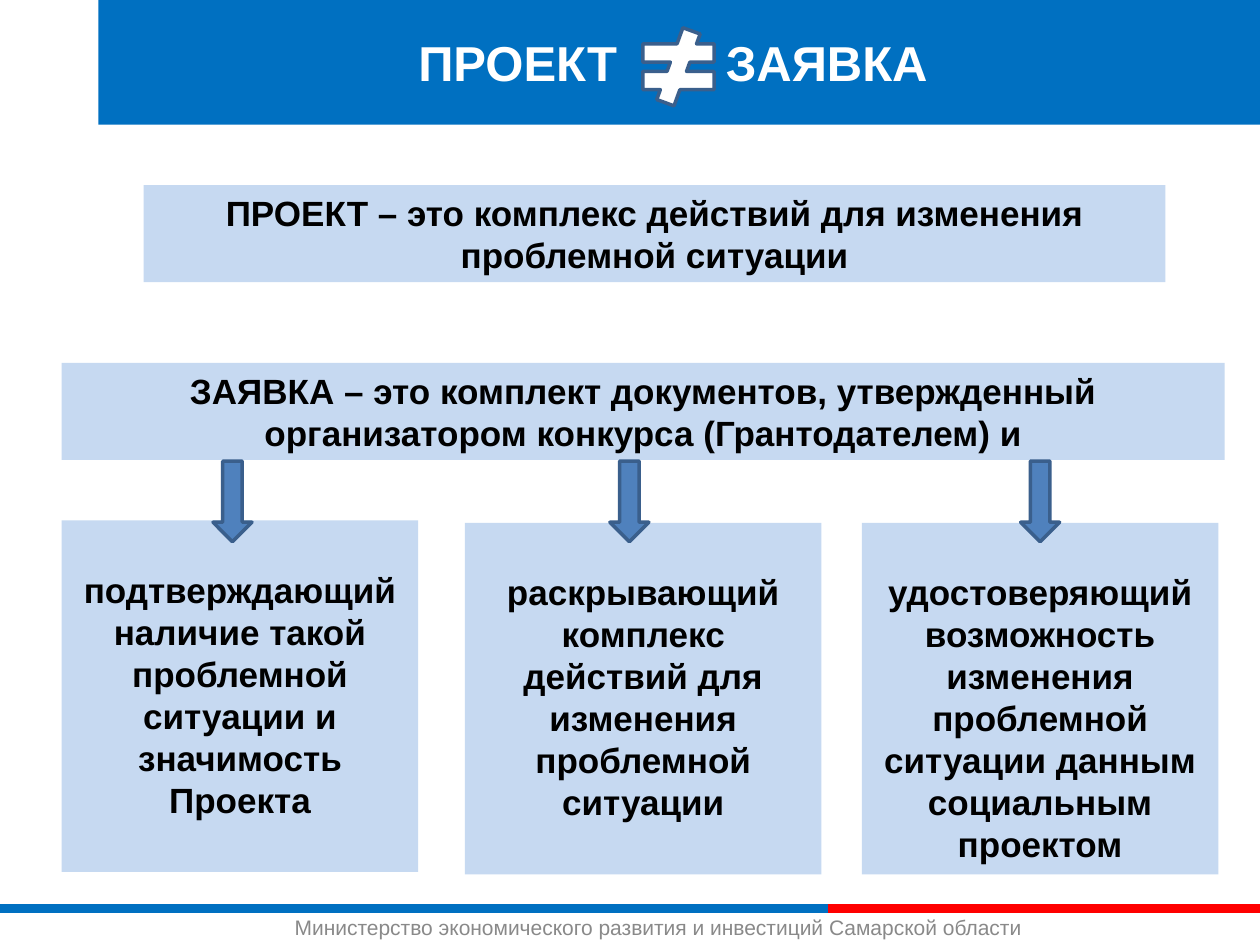
"""Build the slide that contrasts a project with an application."""
from lxml import etree
from pptx import Presentation
from pptx.dml.color import RGBColor
from pptx.enum import shapes, text
from pptx.oxml import ns
from pptx.util import Inches, Pt

SHAPE = shapes.MSO_SHAPE
BLUE, RED, PALE, WHITE = "0070C1", "FF0000", "C6D9F1", "FFFFFF"
ARROW, OUTLINE, GREY, BLACK = "4F81BD", "3A5F8C", "898989", "000000"


def color(value):
    return RGBColor.from_string(value)


class Deck:
    def __init__(self, prs, font="Arial"):
        self.prs, self.font = prs, font
        self.s = prs.slides.add_slide(prs.slide_layouts[5])

    def add_text(self, p, words, size, ink, bold=True):
        r = p.add_run()
        r.text = words
        f = r.font
        f.name, f.size, f.bold = self.font, Pt(size), bold
        f.color.rgb = color(ink)

    def title(self, left, width, height, words, start, tab):
        sp = self.s.shapes.title
        sp.left, sp.top = Inches(left), Inches(0)
        sp.width, sp.height = Inches(width), Inches(height)
        sp.fill.solid()
        sp.fill.fore_color.rgb = color(BLUE)
        tf = sp.text_frame
        tf.auto_size = text.MSO_AUTO_SIZE.NONE
        tf.vertical_anchor = text.MSO_ANCHOR.MIDDLE
        tf.margin_left = Inches(start - left)
        p = tf.paragraphs[0]
        p.alignment = text.PP_ALIGN.LEFT
        tabs = etree.SubElement(p._p.get_or_add_pPr(), ns.qn("a:tabLst"))
        etree.SubElement(tabs, ns.qn("a:tab"),
                         pos=str(Inches(tab - start)), algn="l")
        self.add_text(p, "\t".join(words), 28, WHITE)

    def shape(self, kind, left, top, width, height, fill, line=None):
        sp = self.s.shapes.add_shape(
            kind, Inches(left), Inches(top), Inches(width), Inches(height))
        sp.shadow.inherit = False
        sp.fill.solid()
        sp.fill.fore_color.rgb = color(fill)
        if line:
            sp.line.color.rgb = color(line)
            sp.line.width = Pt(2)
        else:
            sp.line.fill.background()
        return sp

    def panel(self, left, top, width, height, words, inset=0.05):
        tf = self.shape(SHAPE.RECTANGLE, left, top, width, height, PALE).text_frame
        tf.word_wrap = True
        tf.vertical_anchor = text.MSO_ANCHOR.TOP
        tf.margin_top = Inches(inset)
        p = tf.paragraphs[0]
        p.alignment = text.PP_ALIGN.CENTER
        self.add_text(p, words, 20, BLACK)

    def label(self, left, top, width, height, words):
        sp = self.s.shapes.add_textbox(
            Inches(left), Inches(top), Inches(width), Inches(height))
        tf = sp.text_frame
        tf.word_wrap = True
        self.add_text(tf.paragraphs[0], words, 12, GREY, bold=False)

    def rule(self, x1, x2, y, ink):
        c = self.s.shapes.add_connector(
            shapes.MSO_CONNECTOR.STRAIGHT,
            Inches(x1), Inches(y), Inches(x2), Inches(y))
        c.line.color.rgb = color(ink)
        c.line.width = Pt(5)
        etree.SubElement(c._element.spPr, ns.qn("a:effectLst"))


def main():
    prs = Presentation()
    prs.slide_width, prs.slide_height = Inches(10), Inches(7.5)
    d = Deck(prs)
    d.rule(0, 6.57, 7.21, BLUE)
    d.label(2.24, 7.21, 6.54, 0.3,
            "Министерство экономического развития и инвестиций Самарской области")
    d.rule(6.57, 10, 7.21, RED)
    d.title(0.78, 9.22, 0.99, ("ПРОЕКТ", "ЗАЯВКА"), 3.32, 5.76)
    d.panel(1.14, 1.47, 8.11, 0.77,
            "ПРОЕКТ – это комплекс действий для изменения проблемной ситуации")
    d.shape(SHAPE.MATH_NOT_EQUAL, 5, 0.22, 0.77, 0.62, WHITE, OUTLINE)
    d.panel(0.49, 2.88, 9.23, 0.77,
            "ЗАЯВКА – это комплект документов, утвержденный "
            "организатором конкурса (Грантодателем) и")
    parts = (
        (0.49, 4.13, 1.69, "подтверждающий наличие такой проблемной "
                           "ситуации и значимость Проекта"),
        (3.69, 4.15, 4.84, "раскрывающий комплекс действий для изменения "
                           "проблемной ситуации"),
        (6.84, 4.15, 8.1, "удостоверяющий возможность изменения проблемной "
                          "ситуации данным социальным проектом"),
    )
    for left, top, arrow, words in parts:
        d.panel(left, top, 2.83, 2.79, words, inset=0.38)
        d.shape(SHAPE.DOWN_ARROW, arrow, 3.66, 0.31, 0.64, ARROW, OUTLINE)
    prs.save("out.pptx")


if __name__ == "__main__":
    main()
